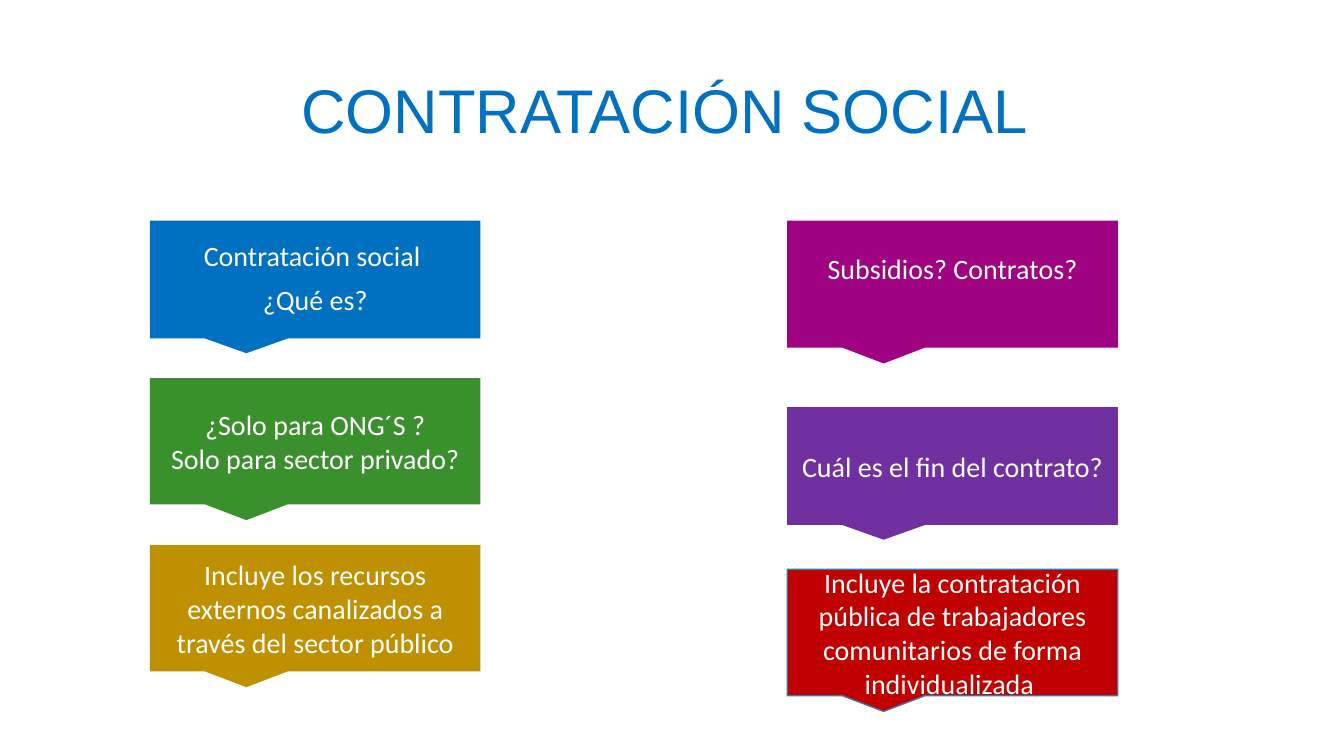
from pptx import Presentation
from pptx.dml.color import RGBColor
from pptx.enum.shapes import MSO_SHAPE
from pptx.enum.text import MSO_ANCHOR, PP_ALIGN
from pptx.util import Cm, Pt

CALLOUT = MSO_SHAPE.RECTANGULAR_CALLOUT
MIDDLE = MSO_ANCHOR.MIDDLE
CENTER = PP_ALIGN.CENTER

COLORS = {
    "blue": "0070C0",
    "green": "3A902C",
    "gold": "BF9000",
    "magenta": "9F0381",
    "purple": "7030A0",
    "red": "C00000",
    "outline": "43739E",
    "white": "FFFFFF",
}


def color(name):
    return RGBColor.from_string(COLORS[name])


def write(box, text, font, size, ink):
    frame = box.text_frame
    frame.word_wrap = True
    frame.vertical_anchor = MIDDLE
    frame.text = text
    for para in frame.paragraphs:
        para.alignment = CENTER
        for span in para.runs:
            span.font.name = font
            span.font.size = Pt(size)
            span.font.color.rgb = color(ink)


deck = Presentation()
deck.slide_width = Cm(33.87)
deck.slide_height = Cm(19.05)
page = deck.slides.add_slide(deck.slide_layouts[6])

# Title
title = page.shapes.add_textbox(Cm(2.34), Cm(1.02), Cm(29.21), Cm(3.68))
write(title, "CONTRATACIÓN SOCIAL ", "Arial", 44, "blue")
title.text_frame.paragraphs[0].line_spacing = 0.9

# Two columns of callouts: fill, left, top, height, text
LEFT, RIGHT, WIDTH = 3.78, 19.84, 8.33
callouts = [
    ("blue", LEFT, 5.56, 2.97, "Contratación social \n¿Qué es?"),
    ("green", LEFT, 9.53, 3.18, "¿Solo para ONG´S ?\nSolo para sector privado?"),
    ("gold", LEFT, 13.74, 3.18,
     "Incluye los recursos externos canalizados a través del sector público"),
    ("magenta", RIGHT, 5.56, 3.2, "Subsidios? Contratos?"),
    ("purple", RIGHT, 10.26, 2.97, "Cuál es el fin del contrato?"),
    ("red", RIGHT, 14.35, 3.18,
     "Incluye la contratación pública de trabajadores comunitarios "
     "de forma individualizada "),
]
boxes = {}
for fill, left, top, height, text in callouts:
    box = page.shapes.add_shape(CALLOUT, Cm(left), Cm(top), Cm(WIDTH), Cm(height))
    box.shadow.inherit = False
    box.fill.solid()
    box.fill.fore_color.rgb = color(fill)
    box.line.fill.background()
    write(box, text, "Calibri", 20, "white")
    boxes[fill] = box

# Looser paragraphs in the opening question
for para in boxes["blue"].text_frame.paragraphs:
    para.line_spacing = 0.9
    para.space_before = Pt(10)

# Raised text in the subsidies callout
boxes["magenta"].text_frame.margin_bottom = Cm(0.9)

# Outlined last callout
boxes["red"].line.color.rgb = color("outline")
boxes["red"].line.width = Pt(1)

deck.save("out.pptx")
